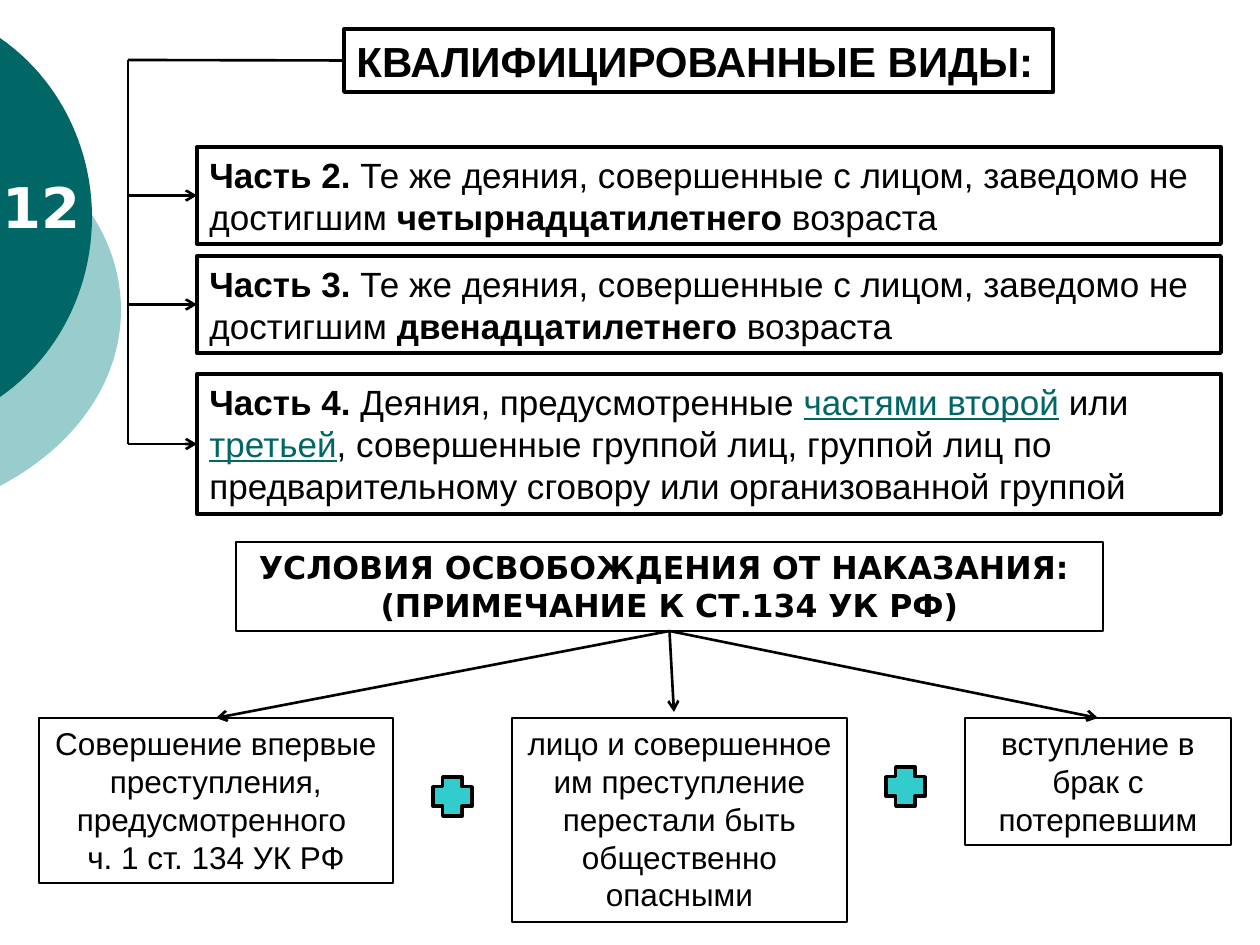
from lxml.etree import SubElement
from pptx import Presentation
from pptx.dml.color import RGBColor
from pptx.enum.shapes import MSO_CONNECTOR as Connector, MSO_SHAPE as Shape
from pptx.enum.text import MSO_ANCHOR as Anchor, MSO_AUTO_SIZE as AutoSize, PP_ALIGN as Align
from pptx.oxml.ns import qn
from pptx.util import Pt

BLACK = RGBColor(0x00, 0x00, 0x00)
WHITE = RGBColor(0xFF, 0xFF, 0xFF)
TEAL = RGBColor(0x00, 0x66, 0x66)
PALE_TEAL = RGBColor(0x99, 0xCC, 0xCC)
TURQUOISE = RGBColor(0x33, 0xCC, 0xCC)

EMU_PER_PX = 914400 / 126
SLIDE_SIZE = (1260, 945)
TOP, LEFT, BOTTOM = 0, 1, 2

ARCS = [
    (PALE_TEAL, [(0, 134), (76, 174), (121, 239), (121, 310), (121, 381), (76, 446), (0, 486)]),
    (TEAL, [(0, 38), (58, 78), (92, 146), (92, 217), (92, 289), (58, 357), (0, 397)]),
]
ARC_STEPS = 24
NUMBER = ("12", (-10, 166, 140, 79))
TITLE = ("КВАЛИФИЦИРОВАННЫЕ ВИДЫ:", (344, 29, 709, 63))

PLAIN, BOLD, LINK = "plain", "bold", "link"
PART_LEFT, PART_WIDTH = 197, 1024
PARTS = [
    (147, 97, [
        ("Часть 2.", BOLD),
        (" Те же деяния, совершенные с лицом, заведомо не достигшим ", PLAIN),
        ("четырнадцатилетнего", BOLD),
        (" возраста", PLAIN),
    ]),
    (256, 97, [
        ("Часть 3.", BOLD),
        (" Те же деяния, совершенные с лицом, заведомо не достигшим ", PLAIN),
        ("двенадцатилетнего", BOLD),
        (" возраста", PLAIN),
    ]),
    (374, 140, [
        ("Часть 4.", BOLD),
        (" Деяния, предусмотренные ", PLAIN),
        ("частями второй", LINK),
        (" или ", PLAIN),
        ("третьей", LINK),
        (", совершенные группой лиц, группой лиц по предварительному сговору "
         "или организованной группой", PLAIN),
    ]),
]
TRUNK_X, TRUNK_TOP, TRUNK_BOTTOM = 128, 60, 444

RELEASE = ("УСЛОВИЯ ОСВОБОЖДЕНИЯ ОТ НАКАЗАНИЯ: \n(ПРИМЕЧАНИЕ К СТ.134 УК РФ)", (236, 542, 867, 89))
CONDITION_TOP = 718
CONDITIONS = [
    ("Совершение впервые преступления, предусмотренного \vч. 1 ст. 134 УК РФ", 39, 354, 165, None),
    ("лицо и совершенное им преступление перестали быть общественно опасными",
     512, 335, 204, (674, 712)),
    ("вступление в брак с потерпевшим", 965, 266, 127, None),
]
PLUS_SIZE = 39
PLUSES = [(433, 777), (886, 767)]


def px(*values):
    return [round(value * EMU_PER_PX) for value in values]


def add_arc(slide, color, points):
    outline = []
    for first in (0, 3):
        a, b, c, d = points[first:first + 4]
        for step in range(ARC_STEPS + 1):
            t = step / ARC_STEPS
            weights = ((1 - t) ** 3, 3 * t * (1 - t) ** 2, 3 * t * t * (1 - t), t ** 3)
            outline.append(tuple(
                sum(w * point[axis] for w, point in zip(weights, (a, b, c, d)))
                for axis in (0, 1)))
    builder = slide.shapes.build_freeform(*px(*outline[0]), scale=1)
    builder.add_line_segments([px(*point) for point in outline[1:]], close=True)
    shape = builder.convert_to_shape()
    shape.shadow.inherit = False
    shape.fill.solid()
    shape.fill.fore_color.rgb = color
    shape.line.fill.background()


def style_text(shape, size, font="Arial", color=BLACK, bold=False, align=Align.LEFT):
    for paragraph in shape.text_frame.paragraphs:
        paragraph.alignment = align
        for run in paragraph.runs:
            run.font.name = font
            run.font.size = Pt(size)
            run.font.bold = bold
            run.font.color.rgb = color


def add_box(slide, box, line_width, text=""):
    shape = slide.shapes.add_shape(Shape.RECTANGLE, *px(*box))
    shape.shadow.inherit = False
    shape.fill.background()
    shape.line.color.rgb = BLACK
    shape.line.width = Pt(line_width)
    shape.text_frame.word_wrap = True
    shape.text_frame.auto_size = AutoSize.SHAPE_TO_FIT_TEXT
    shape.text_frame.vertical_anchor = Anchor.TOP
    shape.text_frame.text = text
    return shape


def add_part(slide, top, height, pieces):
    shape = add_box(slide, (PART_LEFT, top, PART_WIDTH, height), 2.25)
    paragraph = shape.text_frame.paragraphs[0]
    for text, _ in pieces:
        paragraph.add_run().text = text
    style_text(shape, 20)
    for run, (_, style) in zip(paragraph.runs, pieces):
        run.font.bold = style == BOLD
        if style == LINK:
            run.font.underline = True
            run.font.color.rgb = TEAL
    return shape


def add_line(slide, start, end, arrow=False):
    line = slide.shapes.add_connector(Connector.STRAIGHT, *px(*start, *end))
    line.line.color.rgb = BLACK
    line.line.width = Pt(1.5)
    if arrow:
        SubElement(line.line._get_or_add_ln(), qn("a:tailEnd"), type="arrow")
    SubElement(line._element.spPr, qn("a:effectLst"))
    return line


def main():
    """Build the slide on qualified offences and conditions of release."""
    presentation = Presentation()
    presentation.slide_width, presentation.slide_height = px(*SLIDE_SIZE)
    slide = presentation.slides.add_slide(presentation.slide_layouts[6])

    for color, points in ARCS:
        add_arc(slide, color, points)
    text, box = NUMBER
    number = slide.shapes.add_textbox(*px(*box))
    number.text_frame.word_wrap = True
    number.text_frame.text = text
    style_text(number, 32, "DejaVu Sans", WHITE, bold=True)

    text, box = TITLE
    title = add_box(slide, box, 2.25, text)
    title.text_frame.word_wrap = False
    style_text(title, 24, bold=True)
    trunk_start = (TRUNK_X, TRUNK_TOP)
    add_line(slide, trunk_start, trunk_start).begin_connect(title, LEFT)
    add_line(slide, trunk_start, (TRUNK_X, TRUNK_BOTTOM))
    for top, height, pieces in PARTS:
        part = add_part(slide, top, height, pieces)
        middle = top + height / 2
        branch = add_line(slide, (TRUNK_X, middle), (PART_LEFT, middle), arrow=True)
        branch.end_connect(part, LEFT)

    text, box = RELEASE
    release = add_box(slide, box, 1.5, text)
    style_text(release, 18, "DejaVu Sans", bold=True, align=Align.CENTER)
    for text, left, width, height, free_end in CONDITIONS:
        condition = add_box(slide, (left, CONDITION_TOP, width, height), 1.5, text)
        style_text(condition, 18, align=Align.CENTER)
        end = free_end or (left + width / 2, CONDITION_TOP)
        arrow = add_line(slide, end, end, arrow=True)
        arrow.begin_connect(release, BOTTOM)
        if not free_end:
            arrow.end_connect(condition, TOP)

    for left, top in PLUSES:
        plus = slide.shapes.add_shape(Shape.CROSS, *px(left, top, PLUS_SIZE, PLUS_SIZE))
        plus.shadow.inherit = False
        plus.fill.solid()
        plus.fill.fore_color.rgb = TURQUOISE
        plus.line.color.rgb = BLACK
        plus.line.width = Pt(2)

    presentation.save("out.pptx")


if __name__ == "__main__":
    main()
